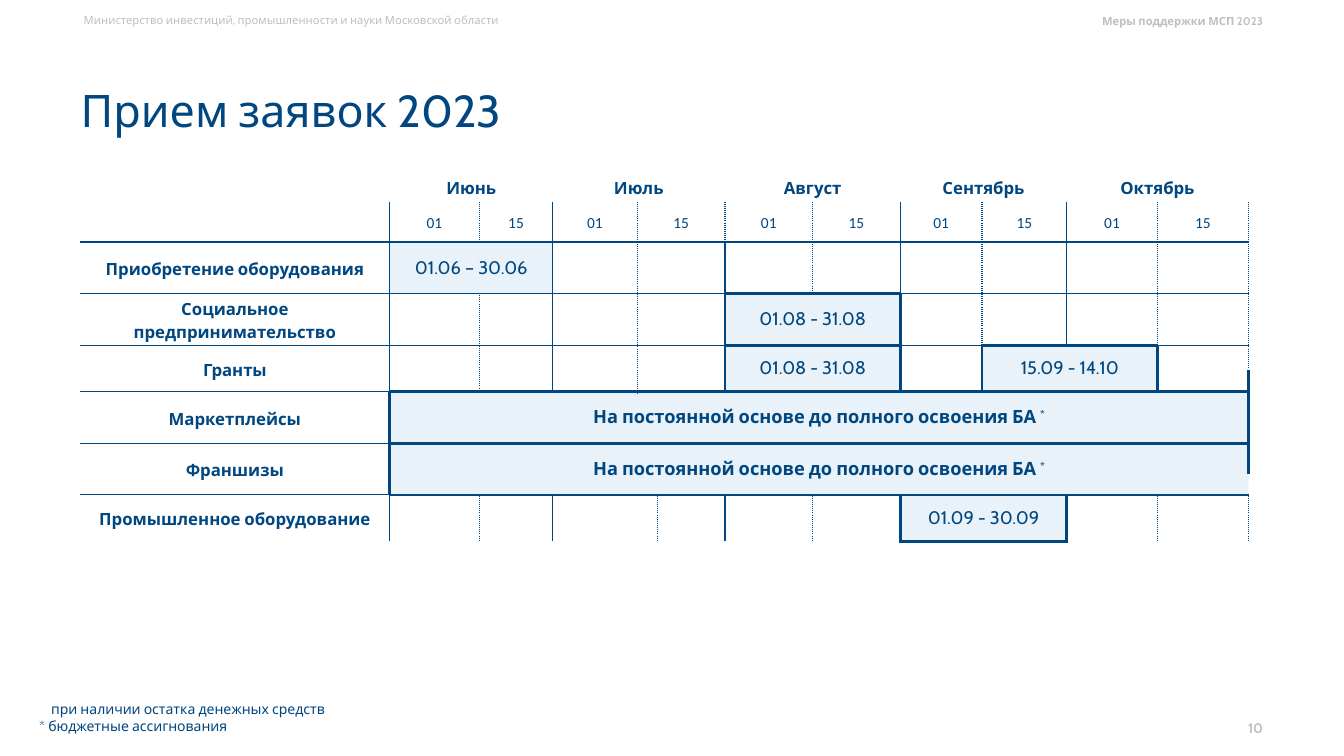
from dataclasses import dataclass

from lxml.etree import SubElement
from pptx import Presentation
from pptx.dml.color import RGBColor
from pptx.enum.shapes import MSO_CONNECTOR as Connector
from pptx.enum.text import MSO_ANCHOR as Anchor, PP_ALIGN as Align
from pptx.oxml.ns import qn
from pptx.util import Cm, Pt


@dataclass(frozen=True)
class Theme:
    navy: str = "004680"
    gray: str = "BFBFBF"
    pale: str = "D3E6F3"
    font: str = "Cabin"
    date_font: str = "Calibri"
    title: int = 32
    bar: int = 13
    label: int = 12
    date: int = 11
    note: int = 10
    running: int = 8
    thin: float = 1
    thick: float = 2.25
    no_table_style: str = "{2D5ABB26-0587-4C30-8999-92F81FD0307C}"


THEME = Theme()
SOLID = (THEME.thin, "solid")
DOTTED = (THEME.thin, "sysDot")
COLUMN_WIDTHS = [7.8, 2.26, 1.85, 2.13, 0.51, 1.7, 2.21, 2.21, 2.06, 2.13, 2.29, 2.29]
ROW_HEIGHTS = [0.74, 1.02, 1.3, 1.3, 1.17, 1.3, 1.3, 1.17]
MONTHS = [("Июнь", 1, 2), ("Июль", 3, 5), ("Август", 6, 7),
          ("Сентябрь", 8, 9), ("Октябрь", 10, 11)]
PROGRAMMES = ["Приобретение оборудования", "Социальное предпринимательство",
              "Гранты", "Маркетплейсы", "Франшизы", "Промышленное оборудование"]
ONGOING = "На постоянной основе до полного освоения БА "
BARS = [
    (2, 1, 2, "01.06 – 30.06", THEME.thin),
    (3, 6, 7, "01.08 - 31.08", THEME.thick),
    (4, 6, 7, "01.08 - 31.08", THEME.thick),
    (4, 9, 10, "15.09 - 14.10", THEME.thick),
    (5, 1, 11, ONGOING, THEME.thick),
    (6, 1, 11, ONGOING, THEME.thick),
    (7, 8, 9, "01.09 - 30.09", THEME.thick),
]


def style_run(run, size, color=THEME.navy, bold=False, font=THEME.font):
    """Set the typeface, size, weight and colour of a run."""
    run.font.name = font
    run.font.size = Pt(size)
    run.font.bold = bold
    run.font.color.rgb = RGBColor.from_string(color)


def add_text(slide, box, lines, size, color=THEME.navy, bold=False,
             align=Align.LEFT, anchor=Anchor.MIDDLE, indents=(0,)):
    """Add a text box with one paragraph per line."""
    frame = slide.shapes.add_textbox(*map(Cm, box)).text_frame
    frame.word_wrap = True
    frame.vertical_anchor = anchor
    frame.text = "\n".join(lines)
    for paragraph, indent in zip(frame.paragraphs, indents):
        paragraph.alignment = align
        paragraph._p.get_or_add_pPr().set("marL", str(Cm(indent)))
        style_run(paragraph.runs[0], size, color, bold)
    return frame


def fill_heading(cell, text, size=THEME.label, bold=True, font=THEME.font):
    """Write a centred month, date or programme heading in a cell."""
    cell.margin_left = cell.margin_right = Cm(0.18)
    cell.margin_top = cell.margin_bottom = 0
    cell.vertical_anchor = Anchor.MIDDLE
    paragraph = cell.text_frame.paragraphs[0]
    paragraph.text = text
    paragraph.alignment = Align.CENTER
    paragraph.line_spacing = 1.15
    paragraph.space_after = Pt(10)
    style_run(paragraph.runs[0], size, bold=bold, font=font)


def fill_bar(cell, text):
    """Write the application period in a bar."""
    ongoing = text == ONGOING
    cell.vertical_anchor = Anchor.MIDDLE
    paragraph = cell.text_frame.paragraphs[0]
    paragraph.text = text
    paragraph.alignment = Align.CENTER
    if ongoing:
        star = paragraph.add_run()
        star.text = "*"
        star.font._element.set("baseline", "30000")
    for run in paragraph.runs:
        style_run(run, THEME.bar, bold=ongoing)


def grid_edges():
    """Return the vertical and horizontal rules of the calendar by position."""
    rows, columns = len(ROW_HEIGHTS), len(COLUMN_WIDTHS)
    month_starts = {first for _, first, _ in MONTHS}
    vertical = {}
    for row in range(1, rows):
        july_middle = 5 if row == rows - 1 else 4
        for column in (1, 2, 3, july_middle, *range(6, columns + 1)):
            vertical[row, column] = SOLID if column in month_starts else DOTTED
    vertical[1, 6] = DOTTED
    horizontal = {(row, column): SOLID
                  for row in range(2, rows) for column in range(columns)}
    for row, first, last, text, width in BARS:
        for column in range(first + 1, last + 1):
            vertical.pop((row, column), None)
        for column in (first, last + 1):
            vertical[row, column] = (width, "solid")
        for column in range(first, last + 1):
            horizontal[row, column] = horizontal[row + 1, column] = (width, "solid")
        if text == ONGOING:
            del vertical[row, last + 1]
    return vertical, horizontal


def add_border(cell, side, edge):
    """Draw one side of a cell."""
    width, dash = edge
    line = SubElement(cell._tc.get_or_add_tcPr(), qn(f"a:ln{side}"), w=str(Pt(width)))
    color = SubElement(SubElement(line, qn("a:solidFill")), qn("a:srgbClr"))
    color.set("val", THEME.navy)
    SubElement(line, qn("a:prstDash"), val=dash)


def style_cells(table):
    """Apply the rules and the fills to every cell."""
    vertical, horizontal = grid_edges()
    shaded = {(row, column) for row, first, last, _, _ in BARS
              for column in range(first, last + 1)}
    for row in range(len(ROW_HEIGHTS)):
        for column in range(len(COLUMN_WIDTHS)):
            cell = table.cell(row, column)
            sides = {"L": vertical.get((row, column)),
                     "R": vertical.get((row, column + 1)),
                     "T": horizontal.get((row, column)),
                     "B": horizontal.get((row + 1, column))}
            for side, edge in sides.items():
                if edge:
                    add_border(cell, side, edge)
            if (row, column) in shaded:
                cell.fill.solid()
                cell.fill.fore_color.rgb = RGBColor.from_string(THEME.pale)
                tint = cell._tc.tcPr.find(qn("a:solidFill"))[0]
                SubElement(tint, qn("a:alpha"), val="50000")
            else:
                cell.fill.background()


def add_calendar(slide):
    """Add the table of application periods."""
    table = slide.shapes.add_table(
        len(ROW_HEIGHTS), len(COLUMN_WIDTHS), Cm(2.02), Cm(4.34),
        Cm(sum(COLUMN_WIDTHS)), Cm(sum(ROW_HEIGHTS))).table
    table.first_row = table.horz_banding = False
    table._tbl.tblPr.find(qn("a:tableStyleId")).text = THEME.no_table_style
    for column, width in zip(table.columns, COLUMN_WIDTHS):
        column.width = Cm(width)
    for row, height in zip(table.rows, ROW_HEIGHTS):
        row.height = Cm(height)
    style_cells(table)

    table.cell(0, 0).merge(table.cell(1, 0))
    for row in (1, 2, 3, 4):
        table.cell(row, 4).merge(table.cell(row, 5))
    table.cell(7, 3).merge(table.cell(7, 4))
    for month, first, last in MONTHS:
        table.cell(0, first).merge(table.cell(0, last))
        fill_heading(table.cell(0, first), month)
        for column, day in ((first, "01"), (first + 1, "15")):
            fill_heading(table.cell(1, column), day, THEME.date, False, THEME.date_font)
    for row, programme in enumerate(PROGRAMMES, start=2):
        fill_heading(table.cell(row, 0), programme)
    for row, first, last, text, _ in BARS:
        table.cell(row, first).merge(table.cell(row, last))
        fill_bar(table.cell(row, first), text)


def add_end_mark(slide, top, bottom):
    """Add a vertical line at the right end of the ongoing bars."""
    mark = slide.shapes.add_connector(
        Connector.STRAIGHT, Cm(31.47), Cm(top), Cm(31.47), Cm(bottom))
    mark.line.color.rgb = RGBColor.from_string(THEME.navy)
    mark.line.width = Pt(2)
    SubElement(mark._element.spPr, qn("a:effectLst"))


def main():
    """Build the slide and save it."""
    deck = Presentation()
    deck.slide_width, deck.slide_height = Cm(33.87), Cm(19.05)
    slide = deck.slides.add_slide(deck.slide_layouts[6])
    add_text(slide, (1.86, 0.2, 14.35, 0.6),
             ["Министерство инвестиций, промышленности и науки Московской области"],
             THEME.running, THEME.gray, anchor=Anchor.TOP)
    add_text(slide, (20.65, 0.3, 11.43, 0.46), ["Меры поддержки МСП 2023"],
             THEME.running, THEME.gray, bold=True, align=Align.RIGHT)
    title = add_text(slide, (1.78, 1.02, 30.33, 3.68), ["Прием заявок 2023"], THEME.title)
    title.paragraphs[0].line_spacing = 0.9
    add_calendar(slide)
    for top, bottom in ((9.32, 10.92), (10.59, 11.94)):
        add_end_mark(slide, top, bottom)
    add_text(slide, (0.66, 17.53, 22.43, 1.12),
             ["при наличии остатка денежных средств", "* бюджетные ассигнования"],
             THEME.note, anchor=Anchor.TOP, indents=(0.38, 0.08))
    add_text(slide, (24.46, 18.03, 7.62, 0.64), ["10"],
             THEME.note, THEME.gray, bold=True, align=Align.RIGHT)
    deck.save("out.pptx")


if __name__ == "__main__":
    main()
